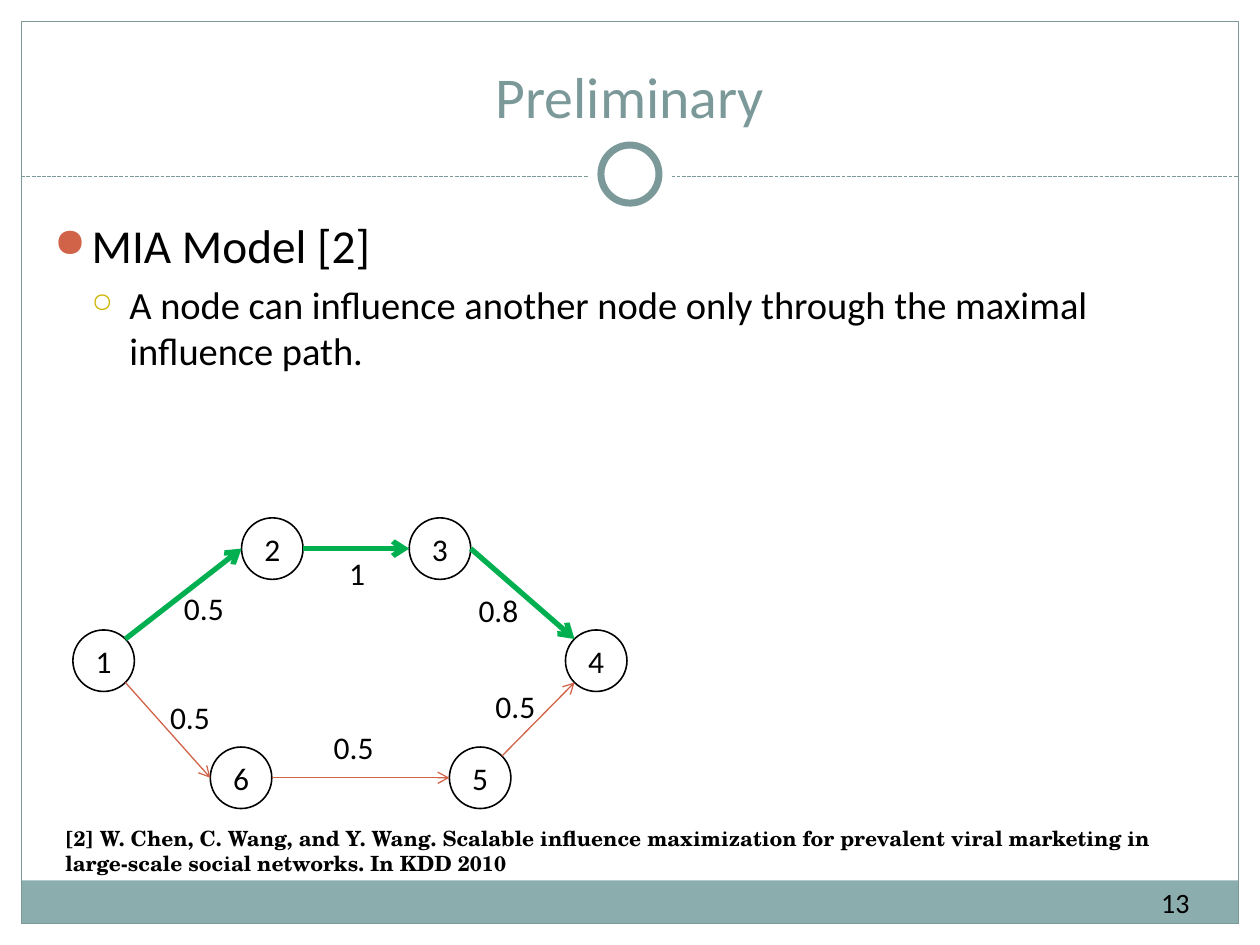
from math import cos, radians, sin

from lxml import etree
from pptx import Presentation
from pptx.dml.color import RGBColor
from pptx.enum.dml import MSO_LINE
from pptx.enum.shapes import MSO_CONNECTOR, MSO_SHAPE
from pptx.enum.text import MSO_ANCHOR, PP_ALIGN
from pptx.oxml.ns import qn
from pptx.util import Cm, Pt

DASH = MSO_LINE.SQUARE_DOT
LINE = MSO_CONNECTOR.STRAIGHT
RECT, OVAL = MSO_SHAPE.RECTANGLE, MSO_SHAPE.OVAL
TOP, MIDDLE, BOTTOM = MSO_ANCHOR.TOP, MSO_ANCHOR.MIDDLE, MSO_ANCHOR.BOTTOM
LEFT, CENTER = PP_ALIGN.LEFT, PP_ALIGN.CENTER

WHITE = RGBColor(0xFF, 0xFF, 0xFF)
BLACK = RGBColor(0, 0, 0)
TEAL = RGBColor(0x7C, 0x99, 0x9A)
BAND = RGBColor(0x8C, 0xAD, 0xAE)
GREEN = RGBColor(0, 0xB0, 0x50)
RED = RGBColor(0xD1, 0x63, 0x49)
GOLD = RGBColor(0xCC, 0xB4, 0)

NODE = 1.24
NODES = {
    "1": (0, 2.26), "4": (9.93, 2.26),
    "2": (3.4, 0), "3": (6.78, 0),
    "6": (2.77, 4.62), "5": (7.59, 4.62),
}
EDGES = [
    ("1", -45, "2", 180, GREEN, 3, "0.5", 1.98, 1.3),
    ("2", 0, "3", 180, GREEN, 3, "1", 5.07, 0.61),
    ("3", 0, "4", -135, GREEN, 3, "0.8", 7.92, 1.35),
    ("1", 45, "6", 180, RED, 0.75, "0.5", 1.7, 3.51),
    ("6", 0, "5", 180, RED, 0.75, "0.5", 5, 4.11),
    ("5", -45, "4", 135, RED, 0.75, "0.5", 8.26, 3.28),
]
POINTS = [
    ("MIA Model [2]", 27, "●", RED, 85),
    ("A node can influence another node only through the maximal influence path.",
     22, "○", GOLD, 70),
]
SOURCE = [
    "[2] W. Chen, C. Wang, and Y. Wang. Scalable influence maximization "
    "for prevalent viral marketing in",
    "large-scale social networks. In KDD 2010",
]


def write(frame, text, size=18, font="Calibri", color=BLACK, bold=False,
          align=LEFT, first=True):
    para = frame.paragraphs[0] if first else frame.add_paragraph()
    para.alignment = align
    run = para.add_run()
    run.text = text
    run.font.size = Pt(size)
    run.font.name = font
    run.font.color.rgb = color
    run.font.bold = bold
    return para


def make_box(slide, left, top, width, height, anchor=TOP, wrap=True):
    box = slide.shapes.add_textbox(Cm(left), Cm(top), Cm(width), Cm(height))
    frame = box.text_frame
    frame.word_wrap = wrap
    frame.vertical_anchor = anchor
    return frame


def make_shape(slide, kind, left, top, width, height, fill=None, line=None,
               weight=0.75):
    shape = slide.shapes.add_shape(kind, Cm(left), Cm(top), Cm(width), Cm(height))
    shape.shadow.inherit = False
    if fill is None:
        shape.fill.background()
    else:
        shape.fill.solid()
        shape.fill.fore_color.rgb = fill
    if line is None:
        shape.line.fill.background()
    else:
        shape.line.color.rgb = line
        shape.line.width = Pt(weight)
    return shape


def make_line(slide, start, end, color, weight, arrow=False, dash=None):
    link = slide.shapes.add_connector(LINE, *map(Cm, (*start, *end)))
    link.line.color.rgb = color
    link.line.width = Pt(weight)
    if dash is not None:
        link.line.dash_style = dash
    if arrow:
        etree.SubElement(link.line._get_or_add_ln(), qn("a:tailEnd"), type="arrow")
    etree.SubElement(link._element.spPr, qn("a:effectLst"))


def add_bullet(para, mark, color, scale, level):
    props = para._p.get_or_add_pPr()
    step = Cm(0.76)
    props.set("marL", str(step * (level + 1)))
    props.set("indent", str(-step))
    tint = etree.SubElement(props, qn("a:buClr"))
    etree.SubElement(tint, qn("a:srgbClr"), val=str(color))
    etree.SubElement(props, qn("a:buSzPct"), val=str(scale * 1000))
    etree.SubElement(props, qn("a:buChar"), char=mark)


def draw_frame(slide, left, top, width, height):
    make_shape(slide, RECT, left, top + height - 0.87, width, 0.87, BAND)
    make_shape(slide, RECT, left, top, width, height, line=TEAL)
    rule = top + 3.13
    make_line(slide, (left, rule), (left + width, rule), TEAL, 0.75, dash=DASH)
    mid = left + width / 2
    for size, line in ((1.7, None), (1.17, TEAL)):
        make_shape(slide, OVAL, mid - size / 2, rule - 0.05 - size / 2,
                   size, size, WHITE, line, 4)
    title = make_box(slide, left + 0.41, top + 0.21, width - 0.82, 2.11, BOTTOM)
    write(title, "Preliminary", size=33, color=TEAL, align=CENTER)
    page = make_box(slide, left + width - 1.91, top + height - 1.04, 1.27, 1.22, MIDDLE)
    page.margin_left = page.margin_right = Cm(0.13)
    write(page, "13", size=16, align=CENTER)


def draw_body(slide, left, top, width, height):
    frame = make_box(slide, left, top, width, height)
    for level, (text, size, mark, color, scale) in enumerate(POINTS):
        para = write(frame, text, size=size, first=level == 0)
        para.level = level
        para.space_before = Pt(size * 0.2)
        add_bullet(para, mark, color, scale, level)


def draw_graph(slide, left, top):
    def find_rim(name, angle):
        x, y = NODES[name]
        turn = radians(angle)
        half = NODE / 2
        return (left + x + half + half * cos(turn),
                top + y + half + half * sin(turn))

    for name, (x, y) in NODES.items():
        node = make_shape(slide, OVAL, left + x, top + y, NODE, NODE,
                          line=BLACK, weight=0.9)
        frame = node.text_frame
        frame.margin_left = frame.margin_right = 0
        frame.vertical_anchor = MIDDLE
        write(frame, name, align=CENTER)
    for tail, out, head, into, color, weight, label, x, y in EDGES:
        make_line(slide, find_rim(tail, out), find_rim(head, into),
                  color, weight, arrow=True)
        frame = make_box(slide, left + x, top + y, 1.32, 1.02, wrap=False)
        write(frame, label, align=CENTER)


def draw_source(slide, left, top, width, height):
    frame = make_box(slide, left, top, width, height, wrap=False)
    for spot, text in enumerate(SOURCE):
        write(frame, text, size=12, font="TeX Gyre Schola", bold=True, first=spot == 0)


def main():
    deck = Presentation()
    deck.slide_width, deck.slide_height = Cm(25.4), Cm(19.05)
    slide = deck.slides.add_slide(deck.slide_layouts[6])
    draw_frame(slide, 0.43, 0.43, 24.54, 18.19)
    draw_body(slide, 0.84, 4.24, 23.62, 12.7)
    draw_graph(slide, 1.47, 10.44)
    draw_source(slide, 1.07, 16.51, 22.78, 1.27)
    deck.save("out.pptx")


if __name__ == "__main__":
    main()
